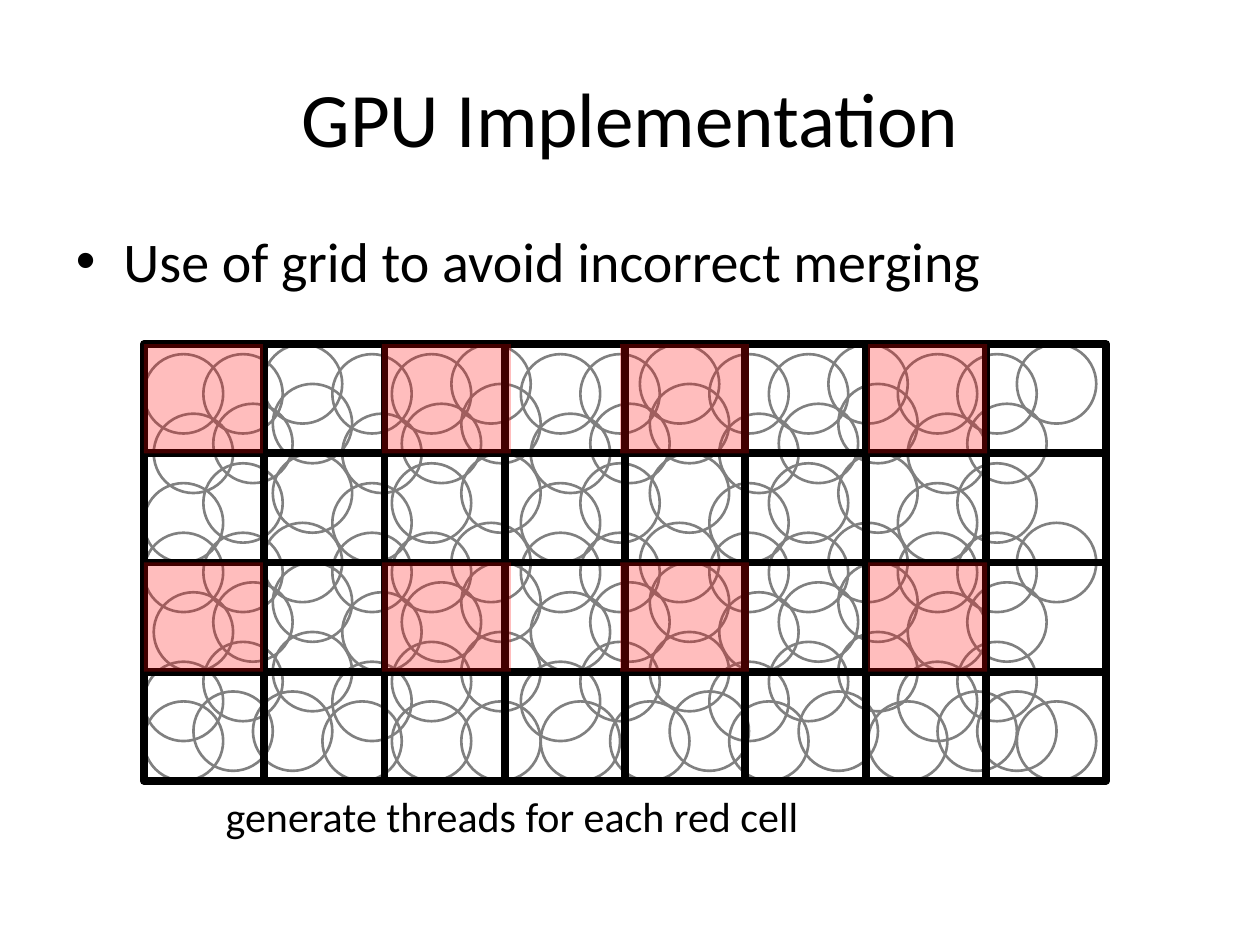
from itertools import product
from typing import NamedTuple

from lxml import etree
from pptx import Presentation
from pptx.dml.color import RGBColor
from pptx.enum.shapes import MSO_CONNECTOR, MSO_SHAPE
from pptx.enum.text import MSO_ANCHOR, MSO_AUTO_SIZE, PP_ALIGN
from pptx.oxml.ns import qn
from pptx.shapes.autoshape import Shape
from pptx.shapes.connector import Connector
from pptx.shapes.shapetree import GroupShapes, SlideShapes
from pptx.text.text import _Paragraph
from pptx.util import Emu, Inches, Pt

RECTANGLE, OVAL = MSO_SHAPE.RECTANGLE, MSO_SHAPE.OVAL
STRAIGHT = MSO_CONNECTOR.STRAIGHT
LEFT, CENTER = PP_ALIGN.LEFT, PP_ALIGN.CENTER
TOP, MIDDLE = MSO_ANCHOR.TOP, MSO_ANCHOR.MIDDLE
FIT_TEXT, FIXED = MSO_AUTO_SIZE.SHAPE_TO_FIT_TEXT, MSO_AUTO_SIZE.NONE

BLACK = RGBColor(0x00, 0x00, 0x00)
GRAY = RGBColor(0x80, 0x80, 0x80)
RED = RGBColor(0xFF, 0x00, 0x00)
FONT = "Calibri"

EMU_PER_PX = 7200  # 127 px to the inch
STEP = 10  # every circle and cell sits on this lattice
CIRCLE = 8 * STEP
BULLET_INDENT = 48
RED_ALPHA = "26000"


class Box(NamedTuple):
    left: float
    top: float
    width: float
    height: float


class Label(NamedTuple):
    text: str
    box: Box
    size: int
    align: PP_ALIGN = LEFT
    anchor: MSO_ANCHOR = TOP
    bullet: bool = False
    wrap: bool = True


class RedColumn(NamedTuple):
    left_steps: int
    width_steps: int


TITLE = Label("GPU Implementation", Box(64, 38, 1143, 159), 44, CENTER, MIDDLE)
BODY = Label("Use of grid to avoid incorrect merging", Box(64, 222, 1143, 629), 32, bullet=True)
CAPTION = Label("generate threads for each red cell", Box(215, 791, 610, 64), 24, wrap=False)

GRID = Box(145, 347, 97 * STEP, 44 * STEP)
COLUMNS, ROWS = 8, 4

# Circle offsets in lattice steps
CLUSTER = [(0, 1), (1, 7), (0, 14), (6, 12), (7, 6), (6, 1), (13, 11), (13, 4), (12, 0)]
CLUSTER_ROWS, CLUSTER_COLUMNS = (0, 18), (0, 19, 38, 57, 76)
LAST_ROW = [(0, 36), (5, 35), (11, 35), (18, 36), (25, 36), (32, 36), (40, 36), (47, 36),
            (53, 35), (59, 36), (66, 35), (73, 36), (80, 35), (84, 35), (88, 36)]

RED_COLUMNS = [RedColumn(0, 12), RedColumn(24, 13), RedColumn(48, 13), RedColumn(73, 12)]
RED_ROWS, RED_HEIGHT = (0, 22), 11


def px(length: float) -> Emu:
    return Emu(round(length * EMU_PER_PX))


def lattice_box(column: int, row: int, width: int, height: int) -> Box:
    """Turn lattice steps inside the grid into a box on the slide."""
    return Box(GRID.left + column * STEP, GRID.top + row * STEP, width * STEP, height * STEP)


def add_plain_shape(shapes: SlideShapes | GroupShapes, kind: MSO_SHAPE, box: Box) -> Shape:
    shape = shapes.add_shape(kind, *map(px, box))
    shape.shadow.inherit = False
    return shape


def add_outline(shapes: SlideShapes | GroupShapes, kind: MSO_SHAPE, box: Box,
                color: RGBColor, points: float) -> Shape:
    shape = add_plain_shape(shapes, kind, box)
    shape.fill.background()
    shape.line.color.rgb = color
    shape.line.width = Pt(points)
    return shape


def add_red_cell(shapes: GroupShapes, box: Box) -> None:
    cell = add_plain_shape(shapes, RECTANGLE, box)
    cell.line.fill.background()
    cell.fill.solid()
    cell.fill.fore_color.rgb = RED
    color = cell.fill._xPr.find(".//" + qn("a:srgbClr"))
    etree.SubElement(color, qn("a:alpha"), val=RED_ALPHA)


def add_grid_line(shapes: GroupShapes, x1: float, y1: float, x2: float, y2: float) -> Connector:
    line = shapes.add_connector(STRAIGHT, px(x1), px(y1), px(x2), px(y2))
    line.line.color.rgb = BLACK
    line.line.width = Pt(4.5)
    etree.SubElement(line._element.spPr, qn("a:effectLst"))
    return line


def join(line: Connector, frame: Shape, begin_site: int, end_site: int) -> None:
    line.begin_connect(frame, begin_site)
    line.end_connect(frame, end_site)


def add_bullet(paragraph: _Paragraph) -> None:
    properties = paragraph._p.get_or_add_pPr()
    properties.set("marL", str(px(BULLET_INDENT)))
    properties.set("indent", str(-px(BULLET_INDENT)))
    etree.SubElement(properties, qn("a:buFont"), typeface="Arial")
    etree.SubElement(properties, qn("a:buChar"), char="•")


def add_label(shapes: SlideShapes, label: Label) -> None:
    frame = shapes.add_textbox(*map(px, label.box)).text_frame
    frame.word_wrap = label.wrap
    frame.auto_size = FIXED if label.wrap else FIT_TEXT
    frame.vertical_anchor = label.anchor
    paragraph = frame.paragraphs[0]
    paragraph.alignment = label.align
    if label.bullet:
        add_bullet(paragraph)
    run = paragraph.add_run()
    run.text = label.text
    run.font.name = FONT
    run.font.size = Pt(label.size)
    run.font.color.rgb = BLACK


def add_circles(shapes: GroupShapes) -> None:
    clusters = [(column + x, row + y) for row, column, (x, y)
                in product(CLUSTER_ROWS, CLUSTER_COLUMNS, CLUSTER)
                if column + x <= LAST_ROW[-1][0]]
    for column, row in clusters + LAST_ROW:
        box = lattice_box(column, row, 8, 8)
        add_outline(shapes, OVAL, box, GRAY, 1.5)


def add_grid(shapes: SlideShapes) -> None:
    frame = add_outline(shapes, RECTANGLE, GRID, BLACK, 4.5)
    lines = shapes.add_group_shape().shapes
    right, bottom = GRID.left + GRID.width, GRID.top + GRID.height
    for column in range(COLUMNS + 1):
        x = GRID.left + column * GRID.width / COLUMNS
        line = add_grid_line(lines, x, GRID.top, x, bottom)
        if column == COLUMNS / 2:
            join(line, frame, 0, 2)
    for row in range(ROWS + 1):
        y = GRID.top + row * GRID.height / ROWS
        line = add_grid_line(lines, GRID.left, y, right, y)
        if row == ROWS / 2:
            join(line, frame, 1, 3)


def main() -> None:
    presentation = Presentation()
    presentation.slide_width, presentation.slide_height = Inches(10), Inches(7.5)
    slide = presentation.slides.add_slide(presentation.slide_layouts[6])
    shapes = slide.shapes

    add_label(shapes, TITLE)
    add_label(shapes, BODY)
    add_circles(shapes.add_group_shape().shapes)
    add_grid(shapes)
    red_cells = shapes.add_group_shape().shapes
    for row, column in product(RED_ROWS, RED_COLUMNS):
        add_red_cell(red_cells, lattice_box(column.left_steps, row, column.width_steps, RED_HEIGHT))
    add_label(shapes, CAPTION)

    presentation.save("out.pptx")


if __name__ == "__main__":
    main()
